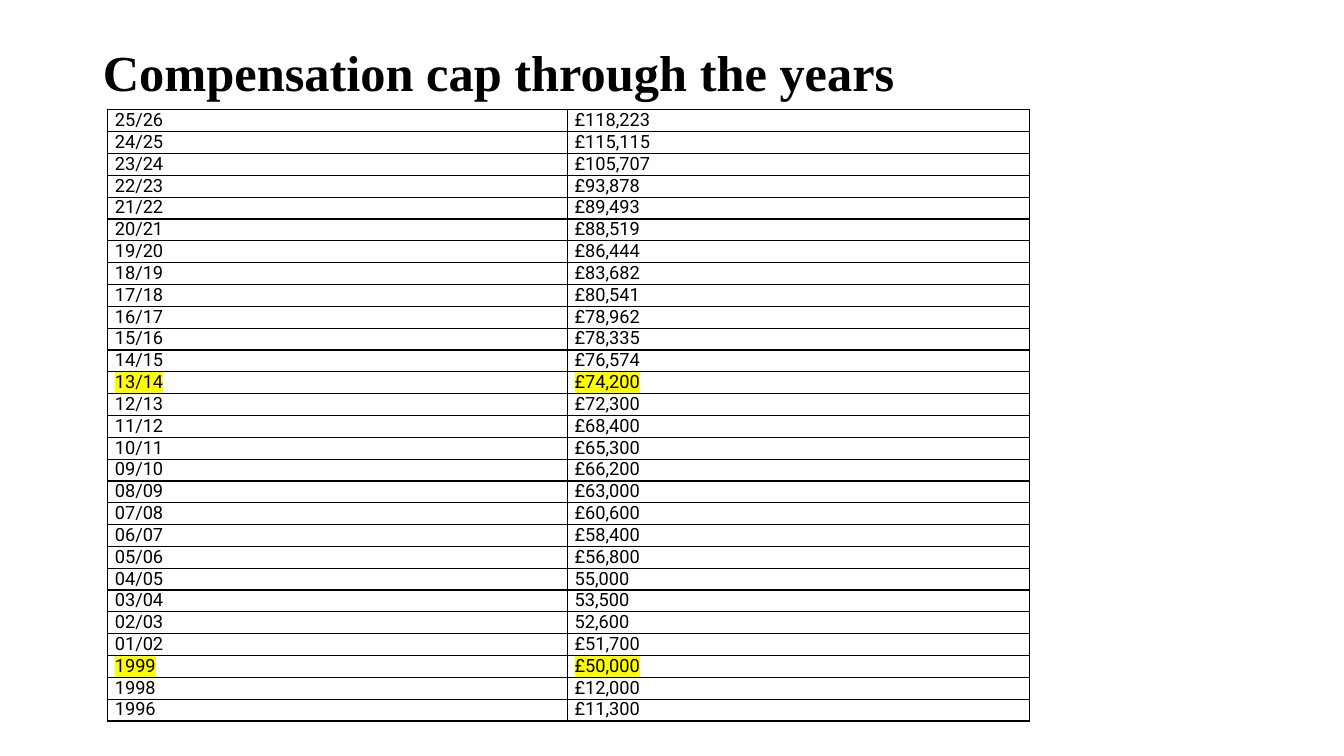
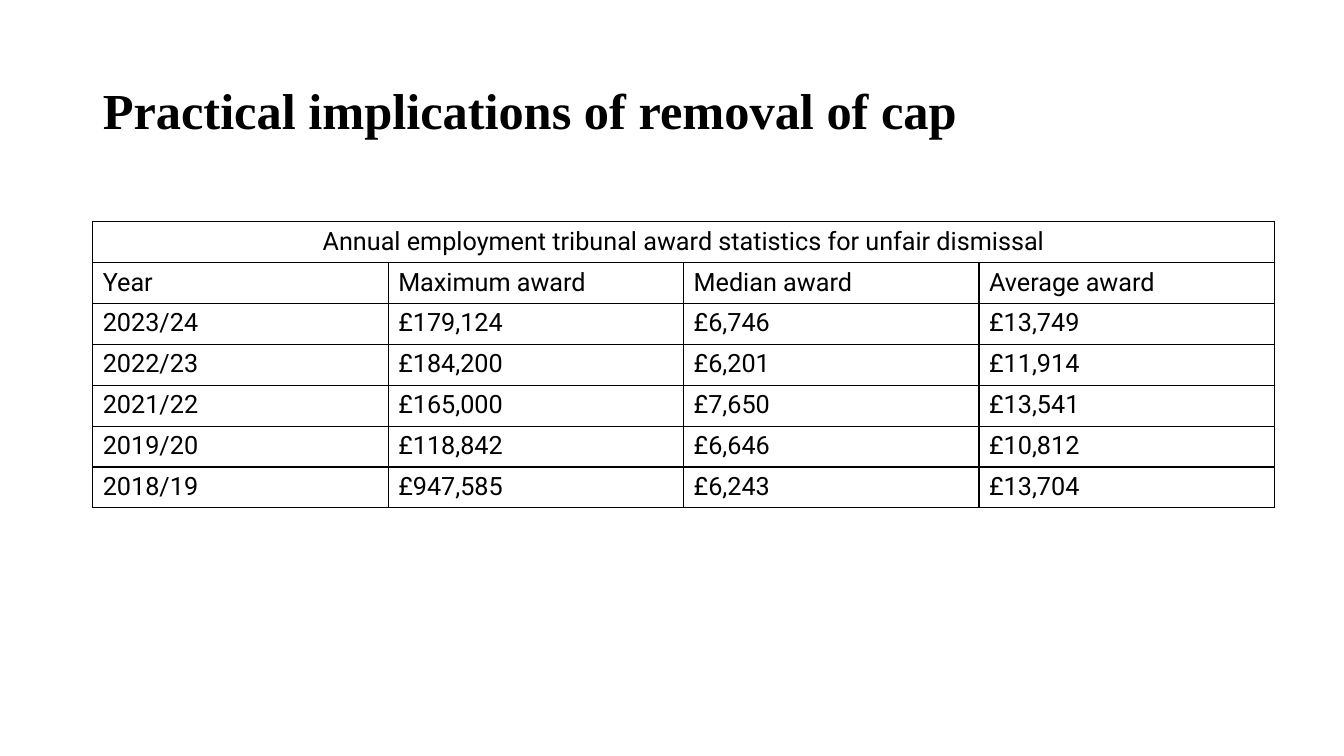
from dataclasses import dataclass

from lxml import etree
from pptx import Presentation
from pptx.dml.color import RGBColor
from pptx.enum.text import MSO_ANCHOR, MSO_AUTO_SIZE, PP_ALIGN
from pptx.oxml.ns import qn
from pptx.util import Emu, Pt

# Shared style
PX = 9144  # EMU in one px (100 px to the inch)
SLIDE_W, SLIDE_H = 1333, 750
BLACK = RGBColor(0x00, 0x00, 0x00)
YELLOW = RGBColor(0xFF, 0xFF, 0x00)
TITLE_FONT, BODY_FONT = "Times New Roman", "Roboto"
TITLE_SIZE = 36
TITLE_LEFT, TITLE_TOP, TITLE_W = 92, 40, 1173
BORDER_PT = 1
TITLE_ONLY = 5
LEFT, CENTER, JUSTIFY = PP_ALIGN.LEFT, PP_ALIGN.CENTER, PP_ALIGN.JUSTIFY
MIDDLE = MSO_ANCHOR.MIDDLE
NO_AUTOFIT = MSO_AUTO_SIZE.NONE


@dataclass(frozen=True)
class TableSpec:
    left: int
    top: int
    height: int
    col_widths: tuple[int, ...]
    rows: tuple[tuple[str, ...], ...]
    size: int
    align: PP_ALIGN = LEFT
    margin_x: int = 10
    margin_y: int = 5
    caption: str = ""  # merged, centred top row
    marked: tuple[str, ...] = ()  # first cells of highlighted rows


@dataclass(frozen=True)
class SlideSpec:
    title: str
    title_height: int
    table: TableSpec


CAP_TABLE = TableSpec(
    left=107, top=109, height=607, col_widths=(456, 458), size=13,
    align=JUSTIFY, margin_x=7, margin_y=0, marked=("13/14", "1999"),
    rows=(
        ("25/26", "£118,223"),
        ("24/25", "£115,115"),
        ("23/24", "£105,707"),
        ("22/23", "£93,878"),
        ("21/22", "£89,493"),
        ("20/21", "£88,519"),
        ("19/20", "£86,444"),
        ("18/19", "£83,682"),
        ("17/18", "£80,541"),
        ("16/17", "£78,962"),
        ("15/16", "£78,335"),
        ("14/15", "£76,574"),
        ("13/14", "£74,200"),
        ("12/13", "£72,300"),
        ("11/12", "£68,400"),
        ("10/11", "£65,300"),
        ("09/10", "£66,200"),
        ("08/09", "£63,000"),
        ("07/08", "£60,600"),
        ("06/07", "£58,400"),
        ("05/06", "£56,800"),
        ("04/05", "55,000"),
        ("03/04", "53,500"),
        ("02/03", "52,600"),
        ("01/02", "£51,700"),
        ("1999", "£50,000"),
        ("1998", "£12,000"),
        ("1996", "£11,300"),
    ),
)

AWARD_TABLE = TableSpec(
    left=92, top=220, height=284, col_widths=(293,) * 4, size=18,
    caption="Annual employment tribunal award statistics for unfair dismissal",
    rows=(
        ("Year", "Maximum award", "Median award", "Average award"),
        ("2023/24", "£179,124", "£6,746", "£13,749"),
        ("2022/23", "£184,200", "£6,201", "£11,914"),
        ("2021/22", "£165,000", "£7,650", "£13,541"),
        ("2019/20", "£118,842", "£6,646", "£10,812"),
        ("2018/19", "£947,585", "£6,243", "£13,704"),
    ),
)

SLIDES = (
    SlideSpec("Compensation cap through the years", 69, CAP_TABLE),
    SlideSpec("Practical implications of removal of cap", 145, AWARD_TABLE),
)


def px(n: float) -> Emu:
    return Emu(round(n * PX))


def add_color(parent, tag: str, color: RGBColor) -> None:
    el = etree.SubElement(parent, qn(tag))
    etree.SubElement(el, qn("a:srgbClr"), val=str(color))


def add_run(p, text: str, font: str, size: int, bold: bool = False,
            highlight: RGBColor | None = None) -> None:
    r = p.add_run()
    r.text = text
    r.font.size = Pt(size)
    r.font.bold = bold
    r.font.color.rgb = BLACK
    if highlight is not None:
        add_color(r.font._element, "a:highlight", highlight)
    r.font.name = font


def add_title(slide, text: str, height: int) -> None:
    sp = slide.shapes.title
    sp.left, sp.top = px(TITLE_LEFT), px(TITLE_TOP)
    sp.width, sp.height = px(TITLE_W), px(height)
    tf = sp.text_frame
    tf.word_wrap = True
    tf.auto_size = NO_AUTOFIT
    tf.vertical_anchor = MIDDLE
    p = tf.paragraphs[0]
    p.alignment = LEFT
    p.line_spacing = 0.9
    add_run(p, text, TITLE_FONT, TITLE_SIZE, bold=True)


def format_cell(cell, spec: TableSpec) -> None:
    cell.margin_left = cell.margin_right = px(spec.margin_x)
    cell.margin_top = cell.margin_bottom = px(spec.margin_y)
    tc_pr = cell._tc.get_or_add_tcPr()
    for side in "LRTB":
        ln = etree.SubElement(tc_pr, qn(f"a:ln{side}"), w=str(Pt(BORDER_PT)))
        add_color(ln, "a:solidFill", BLACK)
    cell.fill.background()


def write_cell(cell, text: str, size: int, align: PP_ALIGN,
               highlight: RGBColor | None = None) -> None:
    p = cell.text_frame.paragraphs[0]
    p.alignment = align
    add_run(p, text, BODY_FONT, size, highlight=highlight)


def add_table(slide, spec: TableSpec) -> None:
    first = 1 if spec.caption else 0
    n_rows = len(spec.rows) + first
    table = slide.shapes.add_table(
        n_rows, len(spec.col_widths), px(spec.left), px(spec.top),
        px(sum(spec.col_widths)), px(spec.height)).table
    table.first_row = table.horz_banding = False
    for col, width in zip(table.columns, spec.col_widths):
        col.width = px(width)
    for row in table.rows:
        row.height = px(spec.height / n_rows)
    for cell in table.iter_cells():
        format_cell(cell, spec)

    # Caption across the full width
    if spec.caption:
        head = table.cell(0, 0)
        head.merge(table.cell(0, len(spec.col_widths) - 1))
        write_cell(head, spec.caption, spec.size, CENTER)

    # Body rows
    for i, values in enumerate(spec.rows, start=first):
        highlight = YELLOW if values[0] in spec.marked else None
        for j, text in enumerate(values):
            write_cell(table.cell(i, j), text, spec.size, spec.align, highlight)


def main() -> None:
    prs = Presentation()
    prs.slide_width, prs.slide_height = px(SLIDE_W), px(SLIDE_H)
    for spec in SLIDES:
        slide = prs.slides.add_slide(prs.slide_layouts[TITLE_ONLY])
        add_title(slide, spec.title, spec.title_height)
        add_table(slide, spec.table)
    prs.save("out.pptx")


if __name__ == "__main__":
    main()
